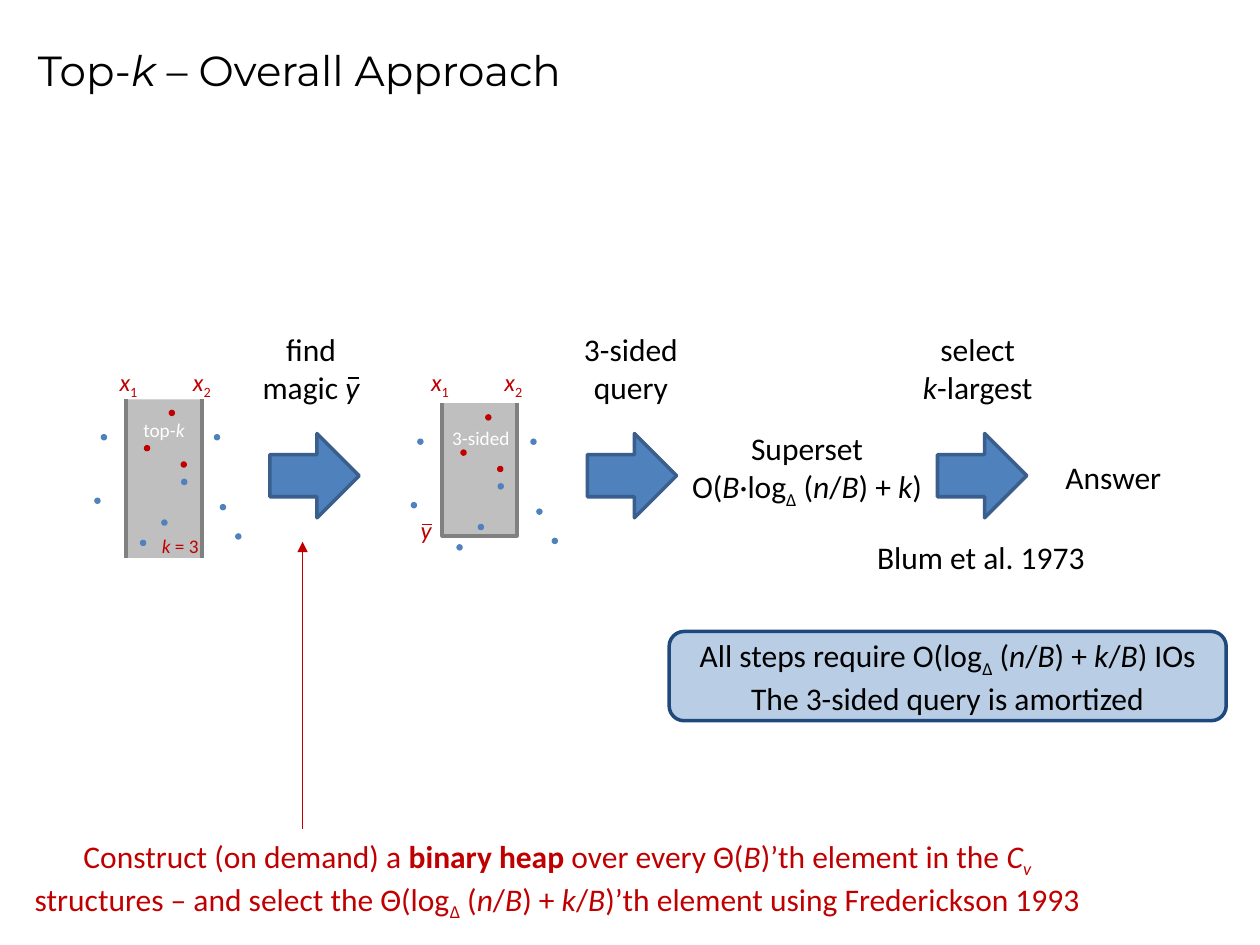
from lxml.etree import SubElement
from pptx import Presentation
from pptx.dml.color import RGBColor
from pptx.enum.shapes import MSO_CONNECTOR, MSO_SHAPE
from pptx.enum.text import MSO_ANCHOR, MSO_AUTO_SIZE, PP_ALIGN
from pptx.oxml.ns import qn
from pptx.util import Cm, Pt

BLACK = RGBColor(0x00, 0x00, 0x00)
WHITE = RGBColor(0xFF, 0xFF, 0xFF)
RED = RGBColor(0xC0, 0x00, 0x00)
BLUE = RGBColor(0x4F, 0x81, 0xBD)
ARROW_EDGE = RGBColor(0x3A, 0x5F, 0x8C)
LIGHT_GRAY = RGBColor(0xBF, 0xBF, 0xBF)
GRAY = RGBColor(0x80, 0x80, 0x80)
PALE_BLUE = RGBColor(0xB9, 0xCD, 0xE5)
NAVY = RGBColor(0x1F, 0x49, 0x7D)

# Content: *italic*, _subscript_, ^bold^; a new line is a new paragraph
TITLE = "Top-*k* – Overall Approach"
BOUND = "All steps require O(log_Δ_ (*n*/*B*) + *k*/*B*) IOs\nThe 3-sided query is amortized"

# Lengths in cm: text, (left, top, width, height), size, colour, alignment
CENTER, LEFT = PP_ALIGN.CENTER, PP_ALIGN.LEFT
FIGURE_LABELS = [
    ("top-*k*", (2.54, 8.31, 1.53, 0.73), 11, WHITE, CENTER),
    ("*k* = 3", (2.87, 10.65, 1.53, 0.73), 11, RED, CENTER),
    ("*x*_1_", (2.16, 7.28, 1, 0.86), 14, RED, LEFT),
    ("*x*_2_", (3.64, 7.28, 1, 0.86), 14, RED, LEFT),
    ("*x*_1_", (8.44, 7.27, 1, 0.86), 14, RED, LEFT),
    ("*x*_2_", (9.92, 7.27, 1, 0.86), 14, RED, LEFT),
    ("*y*", (8.23, 10.26, 1, 0.86), 14, RED, LEFT),
]
NOTES = [
    ("Superset\nO(*B*·log_Δ_ (*n*/*B*) + *k*)", (13.44, 8.53, 5.66, 1.8)),
    ("Answer", (20.78, 9.1, 3.33, 1.02)),
    ("Blum et al. 1973", (17.25, 10.72, 5.05, 1.02)),
]
HEAP_NOTE = (
    "Construct (on demand) a ^binary heap^ over every Θ(*B*)’th element in the *C*_*v* _"
    "structures – and select the Θ(log_Δ_ (*n*/*B*) + *k*/*B*)’th element using Frederickson 1993"
)
STEPS = [
    ("find magic *y*", 4.85, 5.44),
    ("3-sided\nquery", 11.3, 11.84),
    ("select\n*k*-largest", 18.29, 18.9),
]  # label, label left, arrow left

# Point set, shown in both figures
TOP_POINTS = [(3.4, 8.26), (3.64, 9.3), (2.9, 8.97)]
OTHER_POINTS = [
    (2.82, 10.88), (3.65, 9.65), (1.9, 10.03), (3.25, 10.47),
    (4.74, 10.75), (4.43, 10.16), (4.31, 8.75), (2.03, 8.75),
]
POINT_SIZE = 0.13
FIGURE_OFFSETS = [(0, 0), (6.38, 0.09)]


def write(frame, text, size, color, alignment=CENTER, font_name="Calibri"):
    """Fill a text frame with marked-up text."""
    switches = {"*": "italic", "_": "subscript", "^": "bold"}
    for index, line in enumerate(text.split("\n")):
        paragraph = frame.paragraphs[0] if index == 0 else frame.add_paragraph()
        paragraph.alignment = alignment
        active, part = set(), ""
        for character in line + "*":
            if character not in switches:
                part += character
                continue
            if part:
                run = paragraph.add_run()
                run.text = part
                style = {"name": font_name, "size": Pt(size),
                         "italic": "italic" in active, "bold": "bold" in active}
                for attribute, value in style.items():
                    setattr(run.font, attribute, value)
                run.font.color.rgb = color
                if "subscript" in active:
                    run._r.get_or_add_rPr().set("baseline", "-25000")
            active ^= {switches[character]}
            part = ""


def add_text(slide, text, box, size=18, color=BLACK, alignment=CENTER, side_margin=0.25):
    frame = slide.shapes.add_textbox(*map(Cm, box)).text_frame
    layout = {"word_wrap": True, "auto_size": MSO_AUTO_SIZE.SHAPE_TO_FIT_TEXT,
              "margin_left": Cm(side_margin), "margin_right": Cm(side_margin)}
    for attribute, value in layout.items():
        setattr(frame, attribute, value)
    write(frame, text, size, color, alignment)


def paint(shape, fill, edge=None, width=2):
    shape.shadow.inherit = False
    shape.fill.solid()
    shape.fill.fore_color.rgb = fill
    if edge is None:
        shape.line.fill.background()
    else:
        shape.line.color.rgb = edge
        shape.line.width = Pt(width)


def add_shape(slide, kind, box, fill, edge=None):
    shape = slide.shapes.add_shape(kind, *map(Cm, box))
    paint(shape, fill, edge)
    return shape


def add_line(slide, start, end, color, width=0.75):
    line = slide.shapes.add_connector(MSO_CONNECTOR.STRAIGHT, *map(Cm, start + end))
    line.line.color.rgb = color
    line.line.width = Pt(width)
    SubElement(line._element.spPr, qn("a:effectLst"))
    return line


def main():
    presentation = Presentation()
    presentation.slide_width, presentation.slide_height = Cm(25.4), Cm(19.05)
    slide = presentation.slides.add_slide(presentation.slide_layouts[5])

    # Title
    title = slide.shapes.title
    placement = {"left": 0.51, "top": 0.76, "width": 23.62, "height": 3.18}
    for attribute, value in placement.items():
        setattr(title, attribute, Cm(value))
    title.text_frame.vertical_anchor = MSO_ANCHOR.TOP
    write(title.text_frame, TITLE, 24, BLACK, LEFT, "Montserrat")

    # Top-k range, open above and below
    left, top, width, height = 2.54, 8.05, 1.53, 3.2
    add_shape(slide, MSO_SHAPE.RECTANGLE, (left, top, width, height), LIGHT_GRAY)
    for x in (left, left + width):
        add_line(slide, (x, top), (x, top + height), GRAY, 2.25)

    # 3-sided range, open above
    left, right, top, bottom = map(Cm, (8.92, 10.42, 8.13, 10.8))
    builder = slide.shapes.build_freeform(left, top)
    builder.add_line_segments([(left, bottom), (right, bottom), (right, top)], close=False)
    paint(builder.convert_to_shape(), LIGHT_GRAY, GRAY, 2.25)
    add_text(slide, "3-sided", (8.92, 8.46, 1.55, 0.91), 11, WHITE, side_margin=0)

    # Points and labels of both figures
    for shift_x, shift_y in FIGURE_OFFSETS:
        for points, color in ((TOP_POINTS, RED), (OTHER_POINTS, BLUE)):
            for x, y in points:
                box = (x + shift_x, y + shift_y, POINT_SIZE, POINT_SIZE)
                add_shape(slide, MSO_SHAPE.OVAL, box, color)
    for label in FIGURE_LABELS:
        add_text(slide, *label)

    # Steps with their arrows
    for text, label_left, arrow_left in STEPS:
        add_shape(slide, MSO_SHAPE.RIGHT_ARROW, (arrow_left, 8.74, 1.8, 1.7), BLUE, ARROW_EDGE)
        add_text(slide, text, (label_left, 6.53, 2.84, 1.8))
    for text, box in NOTES:
        add_text(slide, text, box)

    # Bars over y
    add_line(slide, (8.51, 10.57), (8.71, 10.57), RED)
    add_line(slide, (7.01, 7.62), (7.24, 7.62), BLACK)

    # Heap note pointing at the first step
    add_text(slide, HEAP_NOTE, (0.3, 16.74, 21.87, 1.8), color=RED)
    pointer = add_line(slide, (6.1, 16.71), (6.1, 10.92), RED)
    SubElement(pointer.line._get_or_add_ln(), qn("a:tailEnd"), type="triangle")

    # Cost summary
    summary = add_shape(slide, MSO_SHAPE.ROUNDED_RECTANGLE, (13.49, 12.73, 11.23, 1.8),
                        PALE_BLUE, NAVY)
    summary.text_frame.word_wrap = True
    summary.text_frame.vertical_anchor = MSO_ANCHOR.MIDDLE
    write(summary.text_frame, BOUND, 18, BLACK)

    presentation.save("out.pptx")


if __name__ == "__main__":
    main()
